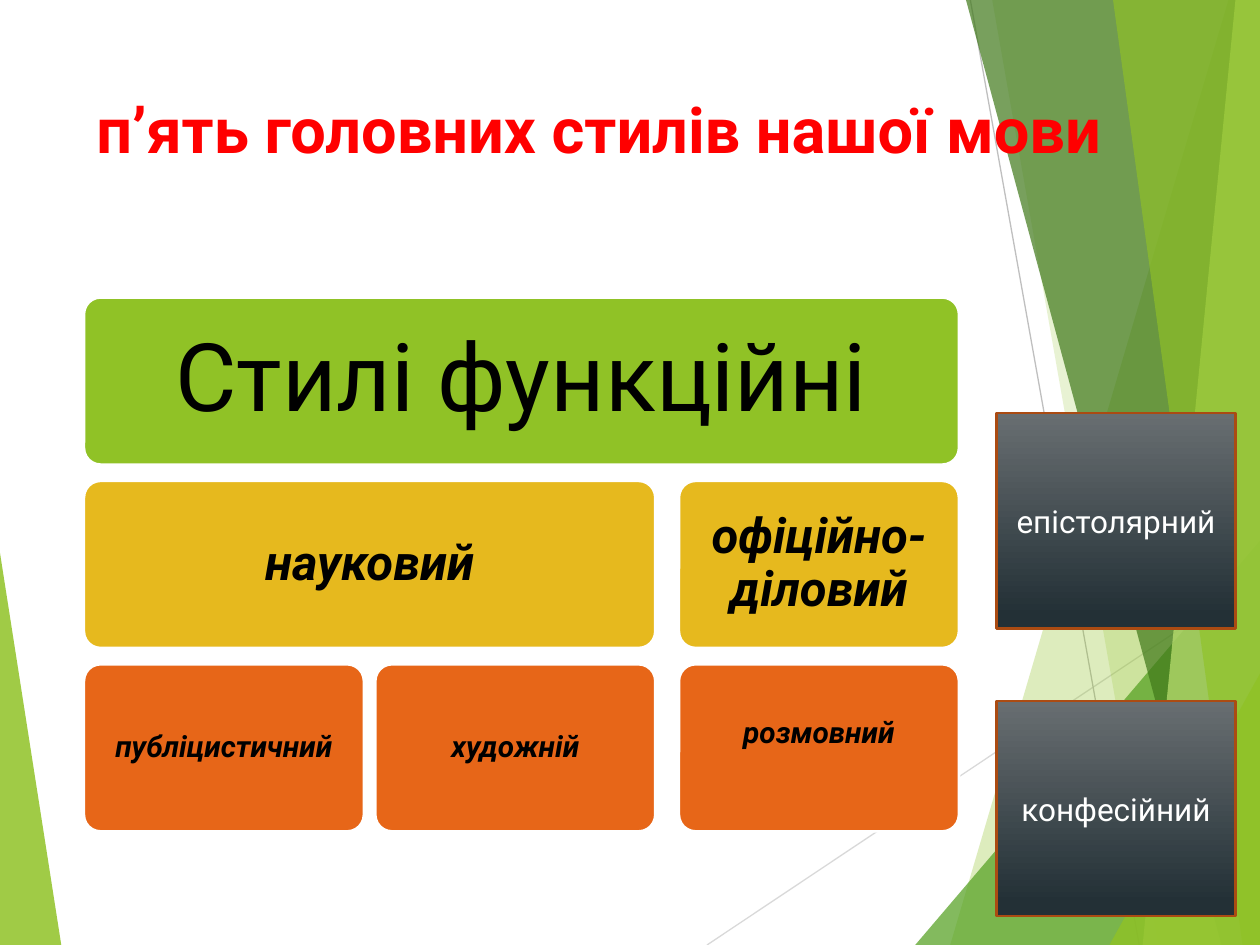
from dataclasses import dataclass

from lxml.etree import SubElement
from pptx import Presentation
from pptx.dml.color import RGBColor
from pptx.enum.shapes import MSO_CONNECTOR, MSO_SHAPE
from pptx.enum.text import MSO_ANCHOR, PP_ALIGN
from pptx.oxml.ns import qn
from pptx.util import Pt

WIDE, HIGH = 720, 540
COLORS = {
    "lime": "90C226", "green": "54A021", "forest": "3F7819", "pale": "C0E474",
    "gold": "E6B91E", "orange": "E76618", "rust": "AB4B12",
    "slate": "686E71", "night": "233036", "red": "FF0000",
    "black": "000000", "white": "FFFFFF", "gray": "BFBFBF", "silver": "D9D9D9",
}
PLAIN = {"name": "Roboto", "bold": False, "italic": False}
STRONG = {"name": "Roboto", "bold": True, "italic": True}
HEAD = {"name": "Roboto", "bold": True, "italic": False}


@dataclass
class Facet:
    points: list
    color: str
    alpha: int


@dataclass
class Ray:
    start: tuple
    end: tuple
    color: str


@dataclass
class Card:
    text: str
    row: int
    col: int
    span: int = 1
    lift: float = 0


@dataclass
class Level:
    color: str
    size: float
    inset: float
    style: dict


@dataclass
class Tile:
    text: str
    top: float


def band(top: float, base: float) -> list:
    """Outline from a slanted left side to the right edge of the slide."""
    return [(top, 0), (base, HIGH), (WIDE, HIGH), (WIDE, 0)]


def wedge(base: float, rise: float) -> list:
    """Triangle in the lower right corner."""
    return [(base, HIGH), (WIDE, rise), (WIDE, HIGH)]


RAYS = [
    Ray((404, 540), (720, 329), "silver"),
    Ray((554.5, 0), (651, 540), "gray"),
]
FACETS = [
    Facet([(0, 316), (35, HIGH), (0, HIGH)], "lime", 85),
    Facet(band(702, 543), "lime", 30),
    Facet(band(567, 662), "lime", 20),
    Facet(wedge(523, 309), "green", 72),
    Facet(band(552, 698), "forest", 70),
    Facet(band(706, 653), "pale", 70),
    Facet(band(636, 710), "lime", 65),
    Facet(wedge(634, 385), "lime", 80),
]
LEVELS = [
    Level("lime", 54, 16.5, PLAIN),
    Level("gold", 28, 8.5, STRONG),
    Level("orange", 17, 5, STRONG),
]
CARDS = [
    Card("Стилі функційні", 0, 0, 3),
    Card("науковий", 1, 0, 2),
    Card("офіційно- діловий", 1, 2),
    Card("публіцистичний", 2, 0),
    Card("художній", 2, 1),
    Card("розмовний", 2, 2, lift=16),
]
TILES = [Tile("епістолярний", 236), Tile("конфесійний", 400.5)]
COLS = [48, 214.5, 388]
CELL_W, CELL_H = 160, 95.5
ROW_TOP, ROW_STEP = 170, 104.8


def rgb(name: str) -> RGBColor:
    return RGBColor.from_string(COLORS[name])


def paint(shape, color: str) -> None:
    shape.shadow.inherit = False
    shape.fill.solid()
    shape.fill.fore_color.rgb = rgb(color)


def border(shape, color: str) -> None:
    shape.line.color.rgb = rgb(color)
    shape.line.width = Pt(1.5)


def write(shape, text: str, size: float, color: str, style: dict,
          align=PP_ALIGN.CENTER, anchor=MSO_ANCHOR.MIDDLE):
    frame = shape.text_frame
    frame.word_wrap = True
    frame.vertical_anchor = anchor
    para = frame.paragraphs[0]
    para.alignment = align
    run = para.add_run()
    run.text = text
    for key, value in {**style, "size": Pt(size)}.items():
        setattr(run.font, key, value)
    run.font.color.rgb = rgb(color)
    return frame


def draw_ray(shapes, ray: Ray) -> None:
    ends = [Pt(n) for n in (*ray.start, *ray.end)]
    line = shapes.add_connector(MSO_CONNECTOR.STRAIGHT, *ends)
    line.line.color.rgb = rgb(ray.color)
    line.line.width = Pt(0.75)
    SubElement(line._element.spPr, qn("a:effectLst"))


def draw_facet(shapes, facet: Facet) -> None:
    first, *rest = [(Pt(x), Pt(y)) for x, y in facet.points]
    pen = shapes.build_freeform(*first)
    pen.add_line_segments(rest, close=True)
    shape = pen.convert_to_shape()
    paint(shape, facet.color)
    shape.line.fill.background()
    tint = shape._element.spPr.find(qn("a:solidFill"))[0]
    SubElement(tint, qn("a:alpha"), val=str(facet.alpha * 1000))


def draw_card(shapes, card: Card) -> None:
    level = LEVELS[card.row]
    left = COLS[card.col]
    width = COLS[card.col + card.span - 1] + CELL_W - left
    top = ROW_TOP + card.row * ROW_STEP
    shape = shapes.add_shape(MSO_SHAPE.ROUNDED_RECTANGLE,
                             Pt(left), Pt(top), Pt(width), Pt(CELL_H))
    shape.adjustments[0] = 0.1
    paint(shape, level.color)
    border(shape, "white")
    frame = write(shape, card.text, level.size, "black", level.style)
    frame.paragraphs[0].line_spacing = 0.9
    for side in ("left", "top", "right", "bottom"):
        setattr(frame, f"margin_{side}", Pt(level.inset))
    frame.margin_bottom = Pt(level.inset + card.lift)


def draw_tile(shapes, tile: Tile) -> None:
    shape = shapes.add_shape(MSO_SHAPE.RECTANGLE,
                             Pt(569.5), Pt(tile.top), Pt(136.5), Pt(123))
    shape.shadow.inherit = False
    shape.fill.gradient()
    shape.fill.gradient_angle = 270
    stops = zip(shape.fill.gradient_stops, ("slate", "night"), (0, 0.94))
    for stop, color, place in stops:
        stop.color.rgb = rgb(color)
        stop.position = place
    border(shape, "rust")
    write(shape, tile.text, 18, "white", PLAIN)


def main() -> None:
    deck = Presentation()
    deck.slide_width, deck.slide_height = Pt(WIDE), Pt(HIGH)
    shapes = deck.slides.add_slide(deck.slide_layouts[6]).shapes
    for ray in RAYS:
        draw_ray(shapes, ray)
    for facet in FACETS:
        draw_facet(shapes, facet)
    title = shapes.add_textbox(Pt(48), Pt(48), Pt(658), Pt(104))
    write(title, "п’ять головних стилів нашої мови", 36, "red", HEAD,
          PP_ALIGN.LEFT, MSO_ANCHOR.TOP)
    for card in CARDS:
        draw_card(shapes, card)
    for tile in TILES:
        draw_tile(shapes, tile)
    deck.save("out.pptx")


if __name__ == "__main__":
    main()
